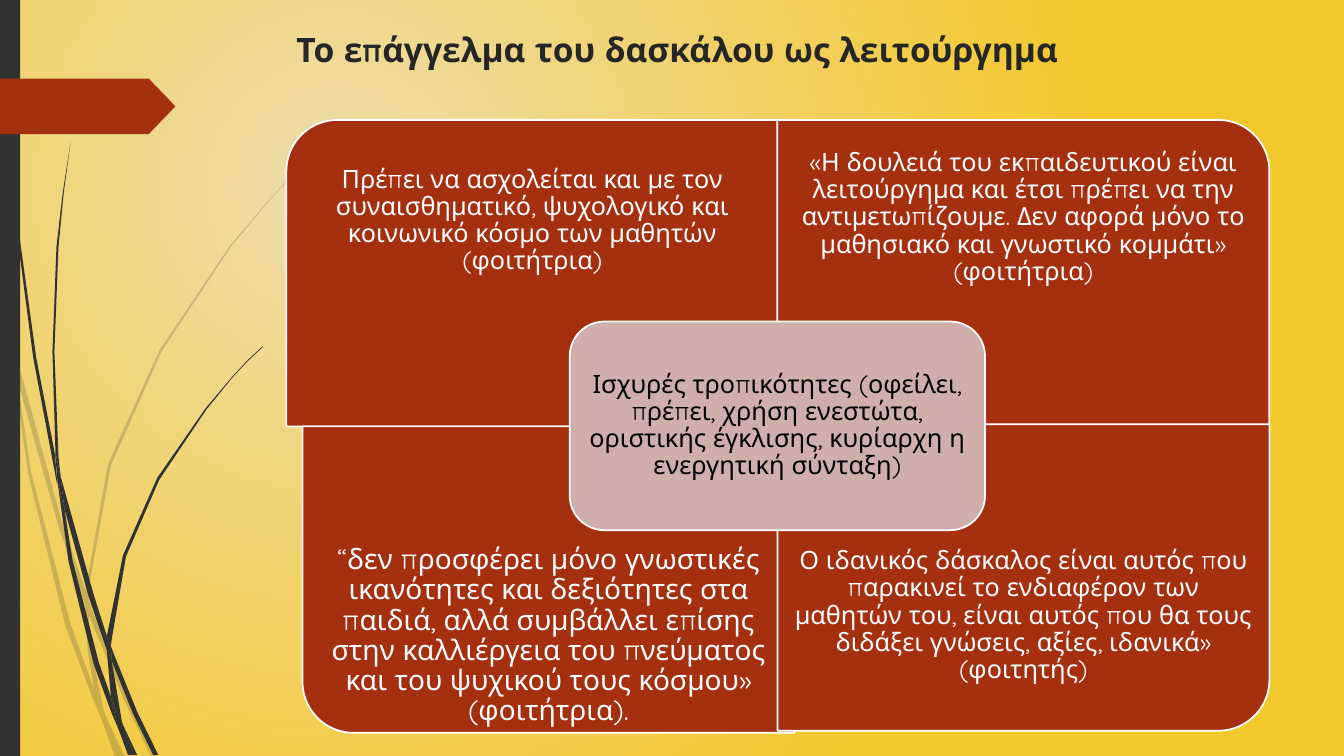
import pptx
import pptx.util
import pptx.dml.color
import pptx.enum.shapes
import pptx.enum.text
import pptx.oxml
import pptx.oxml.ns
from lxml import etree

Inches, Pt = pptx.util.Inches, pptx.util.Pt
RGBColor = pptx.dml.color.RGBColor
MSO_SHAPE = pptx.enum.shapes.MSO_SHAPE
qn = pptx.oxml.ns.qn

FONT = "Quicksand"
CREAM = RGBColor(0xEE, 0xDD, 0xAB)
GOLD = RGBColor(0xF3, 0xC8, 0x2D)
CHARCOAL = RGBColor(0x32, 0x32, 0x32)
INK = RGBColor(0x26, 0x26, 0x26)
BRICK = RGBColor(0xA5, 0x30, 0x0F)
ROSE = RGBColor(0xCF, 0xAE, 0xAB)
WHITE = RGBColor(0xFF, 0xFF, 0xFF)
BLACK = RGBColor(0, 0, 0)

TITLE = "Το επάγγελμα του δασκάλου ως λειτούργημα"

# Grass outlines, in hundredths of an inch
PALE_GRASS = [
    [(11, 350), (9, 322), (0, 282), (0, 299), (10, 344)],
    [(58, 522), (84, 599), (85, 586), (62, 520), (14, 345), (17, 376)],
    [(92, 607), (88, 596), (88, 610), (123, 694), (150, 751), (155, 751), (127, 692)],
    [(119, 751), (124, 751), (105, 711)],
    [(93, 683), (70, 619), (31, 469), (17, 376), (11, 350), (28, 470), (65, 621),
     (92, 693), (101, 714), (99, 707)],
    [(84, 599), (87, 646), (93, 683), (96, 692), (105, 711), (103, 706), (91, 646),
     (88, 610), (88, 608)],
    [(88, 584), (110, 462), (160, 349), (229, 245), (268, 198), (290, 175), (312, 154),
     (312, 153), (289, 175), (268, 197), (228, 244), (158, 348), (107, 461), (85, 584),
     (85, 586), (88, 596)],
    [(101, 714), (114, 751), (119, 751)],
    [(88, 608), (88, 610), (88, 596), (85, 586), (84, 599)],
    [(96, 692), (93, 683), (99, 707), (101, 714), (119, 751), (105, 711)],
]
DARK_GRASS = [
    [(7, 110), (17, 233), (33, 355), (56, 477), (57, 481), (55, 457), (55, 453),
     (36, 355), (19, 232), (8, 109), (5, 48), (4, 0), (3, 0), (4, 48)],
    [(88, 592), (106, 645), (106, 633), (106, 631), (93, 590), (60, 472), (64, 505)],
    [(113, 649), (110, 641), (111, 656), (132, 708), (152, 749), (157, 749), (136, 706)],
    [(110, 691), (98, 657), (72, 556), (64, 505), (57, 477), (68, 557), (93, 659),
     (111, 708), (117, 722), (116, 717)],
    [(60, 472), (58, 453), (54, 349), (58, 245), (63, 193), (70, 141), (62, 193),
     (56, 245), (52, 349), (55, 449)],
    [(133, 749), (136, 749), (122, 719)],
    [(57, 477), (64, 505), (60, 472), (55, 449), (55, 453)],
    [(111, 633), (125, 552), (158, 476), (205, 406), (231, 374), (245, 359), (261, 344),
     (260, 344), (245, 358), (231, 373), (204, 405), (156, 474), (122, 551), (106, 631),
     (110, 641)],
    [(117, 722), (127, 749), (131, 749)],
    [(106, 645), (110, 691), (116, 706), (122, 719), (121, 716), (111, 656), (109, 651)],
    [(106, 645), (109, 651), (111, 656), (110, 641), (106, 631), (106, 633)],
    [(116, 706), (110, 691), (116, 717), (117, 722), (130, 749), (133, 749), (122, 719)],
]

# Panel left, top, rotation; text offset; top and bottom insets; size; text
PANEL_W, PANEL_H, PANEL_TEXT_H = 4.88, 3.04, 2.28
LOWER = PANEL_H - PANEL_TEXT_H
PANELS = [
    (2.84, 1.19, 270, 0, 0.14, 0.42, 18,
     "Πρέπει να ασχολείται και με τον συναισθηματικό, ψυχολογικό και κοινωνικό "
     "κόσμο των μαθητών (φοιτήτρια)"),
    (7.71, 1.19, 0, 0, 0.14, 0.48, 18,
     "«Η δουλειά του εκπαιδευτικού είναι λειτούργημα και έτσι πρέπει να την "
     "αντιμετωπίζουμε. Δεν αφορά μόνο το μαθησιακό και γνωστικό κομμάτι» (φοιτήτρια)"),
    (3, 4.23, 180, LOWER, 0.36, 0, 20,
     "“δεν προσφέρει μόνο γνωστικές ικανότητες και δεξιότητες στα παιδιά, αλλά "
     "συμβάλλει επίσης στην καλλιέργεια του πνεύματος και του ψυχικού τους κόσμου» "
     "(φοιτήτρια)."),
    (7.71, 4.21, 90, LOWER, 0.14, 0.14, 18,
     "Ο ιδανικός δάσκαλος είναι αυτός που παρακινεί το ενδιαφέρον των μαθητών του, "
     "είναι αυτός που θα τους διδάξει γνώσεις, αξίες, ιδανικά» (φοιτητής)"),
]
CENTRE_TEXT = ("Ισχυρές τροπικότητες (οφείλει, πρέπει, χρήση ενεστώτα, οριστικής "
               "έγκλισης, κυρίαρχη η ενεργητική σύνταξη)")


def paint(sp, fill, line=None):
    sp.shadow.inherit = False
    sp.fill.solid()
    sp.fill.fore_color.rgb = fill
    if line is None:
        sp.line.fill.background()
    else:
        sp.line.color.rgb = line
        sp.line.width = Pt(1.25)


def add_preset(s, kind, x, y, w, h, fill, line=None):
    sp = s.shapes.add_shape(kind, Inches(x), Inches(y), Inches(w), Inches(h))
    paint(sp, fill, line)
    return sp


def add_run(p, text, size, color, bold=False):
    r = p.add_run()
    r.text = text
    r.font.name, r.font.size, r.font.bold = FONT, Pt(size), bold
    r.font.color.rgb = color


def add_text(s, x, y, w, h, text, size, color, side, top, bottom):
    tf = s.shapes.add_textbox(Inches(x), Inches(y), Inches(w), Inches(h)).text_frame
    tf.word_wrap = True
    tf.vertical_anchor = pptx.enum.text.MSO_ANCHOR.MIDDLE
    tf.margin_left = tf.margin_right = Inches(side)
    tf.margin_top, tf.margin_bottom = Inches(top), Inches(bottom)
    p = tf.paragraphs[0]
    p.alignment = pptx.enum.text.PP_ALIGN.CENTER
    p.line_spacing = 0.9
    add_run(p, text, size, color)


def add_background(s):
    fill = s.background.fill
    fill.gradient()
    for stop, color, position in zip(fill.gradient_stops, (CREAM, GOLD), (0, 1)):
        stop.color.rgb = color
        stop.position = position
    # Radial gradient centred in the upper left quarter
    grad = s.background._cSld.find(".//" + qn("a:gradFill"))
    lin = grad.find(qn("a:lin"))
    radial = etree.Element(qn("a:path"), path="circle")
    etree.SubElement(radial, qn("a:fillToRect"), l="50000", t="50000", r="100000", b="100000")
    grad.replace(lin, radial)


def add_grass(s, outlines, alpha=None):
    for start, *rest in outlines:
        builder = s.shapes.build_freeform(*start, scale=Inches(0.01))
        builder.add_line_segments(rest, close=True)
        sp = builder.convert_to_shape()
        paint(sp, CHARCOAL)
        if alpha is not None:
            color = sp._element.spPr.find(qn("a:solidFill")).find(qn("a:srgbClr"))
            etree.SubElement(color, qn("a:alpha"), val=str(alpha * 1000))


def add_side_decor(s):
    add_grass(s, PALE_GRASS, alpha=20)
    add_grass(s, DARK_GRASS)
    add_preset(s, MSO_SHAPE.RECTANGLE, 0, 0, 0.2, 7.5, CHARCOAL)
    arrow = add_preset(s, MSO_SHAPE.PENTAGON, 0, 0.78, 1.74, 0.55, BRICK)
    arrow.adjustments[0] = 0.48


def add_title(s, x, y, w, h):
    title = s.shapes.title
    title.left, title.top, title.width, title.height = map(Inches, (x, y, w, h))
    tf = title.text_frame
    tf.vertical_anchor = pptx.enum.text.MSO_ANCHOR.TOP
    p = tf.paragraphs[0]
    p.alignment = pptx.enum.text.PP_ALIGN.LEFT
    add_run(p, TITLE, 24, INK, bold=True)


def add_panel(s, x, y, rotation, offset, top, bottom, size, text):
    # A quarter turn swaps width and height about the same centre
    w, h = (PANEL_H, PANEL_W) if rotation % 180 else (PANEL_W, PANEL_H)
    sp = add_preset(s, MSO_SHAPE.ROUND_1_RECTANGLE, x + (PANEL_W - w) / 2,
                    y + (PANEL_H - h) / 2, w, h, BRICK, WHITE)
    sp.rotation = rotation
    add_text(s, x, y + offset, PANEL_W, PANEL_TEXT_H, text, size, WHITE, 0.14, top, bottom)


def add_centre(s, x, y, w, h):
    add_preset(s, MSO_SHAPE.ROUNDED_RECTANGLE, x, y, w, h, ROSE, WHITE)
    add_text(s, x + 0.1, y + 0.1, w - 0.2, h - 0.2, CENTRE_TEXT, 18, BLACK, 0.07, 0.07, 0.07)


def main():
    prs = pptx.Presentation()
    prs.slide_width, prs.slide_height = Inches(13.33), Inches(7.5)
    s = prs.slides.add_slide(prs.slide_layouts[5])
    add_background(s)
    add_side_decor(s)
    add_title(s, 2.84, 0.24, 9.75, 0.96)
    for panel in PANELS:
        add_panel(s, *panel)
    add_centre(s, 5.65, 3.19, 4.12, 2.07)
    prs.save("out.pptx")


if __name__ == "__main__":
    main()
